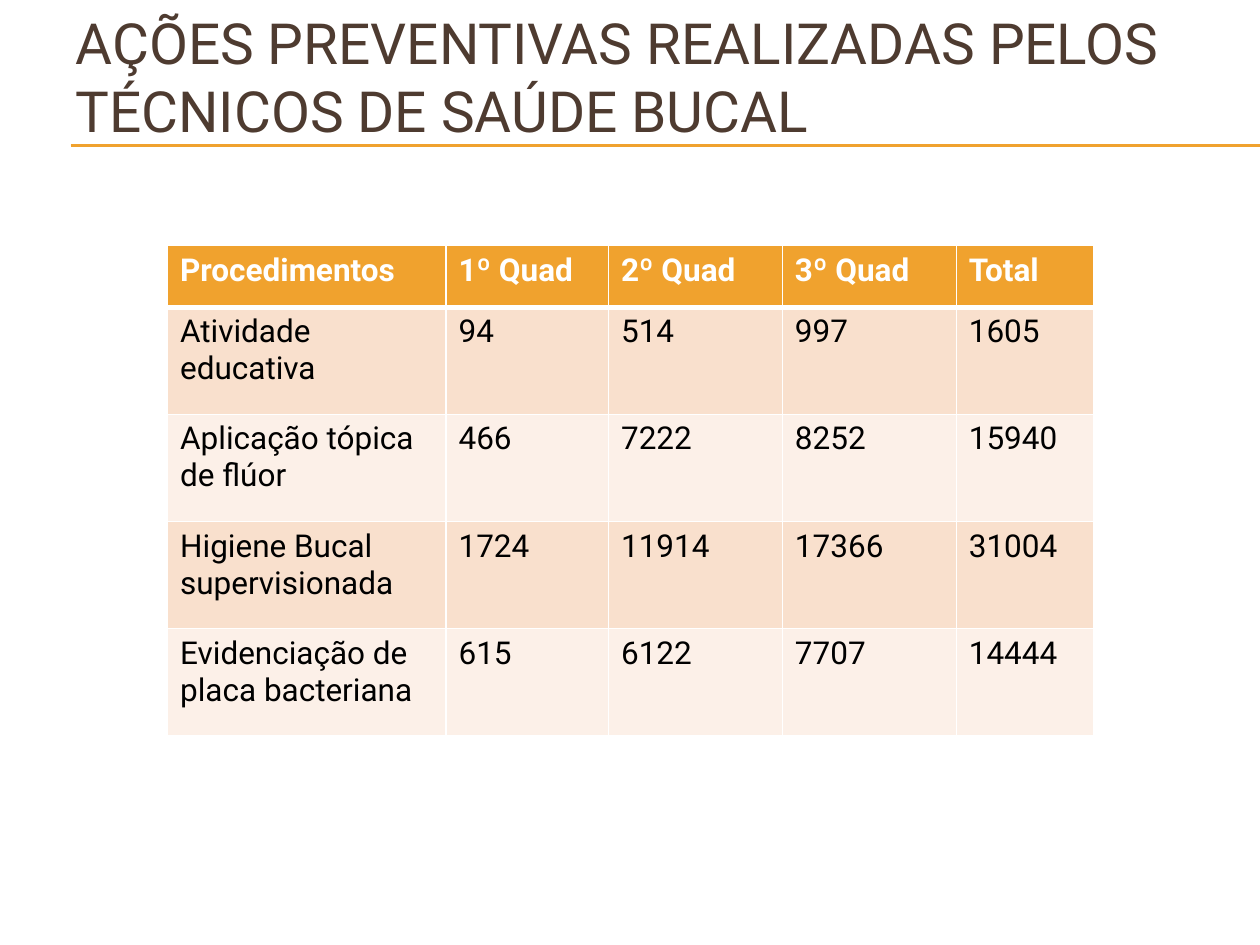
"""Slide with a table of preventive actions by dental health technicians."""
from lxml import etree
from pptx import Presentation
from pptx import util as u
from pptx.dml.color import RGBColor
from pptx.enum import shapes, text
from pptx.oxml.ns import qn

COLOURS = {"accent": "F0A22E", "title": "4E3B30", "white": "FFFFFF",
           "black": "000000", "odd": "F9E0CD", "even": "FCF0E8"}
COLUMNS = [2.21, 1.29, 1.38, 1.38, 1.09]
ROWS = [0.49] + [0.85] * 4
PROCEDURES = [
    ["Procedimentos", "1º Quad", "2º Quad", "3º Quad", "Total"],
    ["Atividade educativa", "94", "514", "997", "1605"],
    ["Aplicação tópica de flúor", "466", "7222", "8252", "15940"],
    ["Higiene Bucal supervisionada", "1724", "11914", "17366", "31004"],
    ["Evidenciação de placa bacteriana", "615", "6122", "7707", "14444"],
]


def style_font(font, colour, **values):
    font.color.rgb = RGBColor.from_string(COLOURS[colour])
    for name, value in {"name": "Roboto", **values}.items():
        setattr(font, name, value)


def add_border(cell, side, points):
    line = etree.SubElement(cell._tc.get_or_add_tcPr(), qn(f"a:{side}"), w=str(u.Pt(points)))
    fill = etree.SubElement(line, qn("a:solidFill"))
    etree.SubElement(fill, qn("a:srgbClr"), val=COLOURS["white"])


deck = Presentation()
deck.slide_width, deck.slide_height = u.Inches(10), u.Inches(7.5)
slide = deck.slides.add_slide(deck.slide_layouts[5])

for height in (1.15, 1.16):
    rule = slide.shapes.add_connector(
        shapes.MSO_CONNECTOR.STRAIGHT, u.Inches(0.56), u.Inches(height),
        deck.slide_width, u.Inches(height))
    rule.line.color.rgb = RGBColor.from_string(COLOURS["accent"])
    rule.line.width = u.Pt(0.75)
    etree.SubElement(rule._element.spPr, qn("a:effectLst"))

heading = slide.shapes.title
for name, value in {"left": 0.5, "top": 0.39, "width": 9.5, "height": 0.94}.items():
    setattr(heading, name, u.Inches(value))
frame = heading.text_frame
frame.text = "AÇÕES PREVENTIVAS REALIZADAS PELOS TÉCNICOS DE SAÚDE BUCAL"
for name, value in {"word_wrap": True, "auto_size": text.MSO_AUTO_SIZE.NONE,
                    "vertical_anchor": text.MSO_ANCHOR.MIDDLE,
                    "margin_bottom": u.Inches(0.57)}.items():
    setattr(frame, name, value)
frame.paragraphs[0].alignment = text.PP_ALIGN.LEFT
style_font(frame.paragraphs[0].runs[0].font, "title", size=u.Pt(32.4))

procedures = slide.shapes.add_table(
    len(ROWS), len(COLUMNS), u.Inches(1.33), u.Inches(1.95),
    u.Inches(sum(COLUMNS)), u.Inches(sum(ROWS))).table
for column, width in zip(procedures.columns, COLUMNS):
    column.width = u.Inches(width)
for r, (row, height, values) in enumerate(zip(procedures.rows, ROWS, PROCEDURES)):
    row.height = u.Inches(height)
    header = r == 0
    band = "accent" if header else "odd" if r % 2 else "even"
    for cell, value in zip(row.cells, values):
        cell.text = value
        style_font(cell.text_frame.paragraphs[0].runs[0].font,
                   "white" if header else "black", size=u.Pt(18), bold=header)
        borders = {"lnL": 1, "lnR": 1, "lnT": 3 if r == 1 else 1, "lnB": 3 if header else 1}
        for side, points in borders.items():
            add_border(cell, side, points)
        cell.fill.solid()
        cell.fill.fore_color.rgb = RGBColor.from_string(COLOURS[band])

deck.save("out.pptx")
